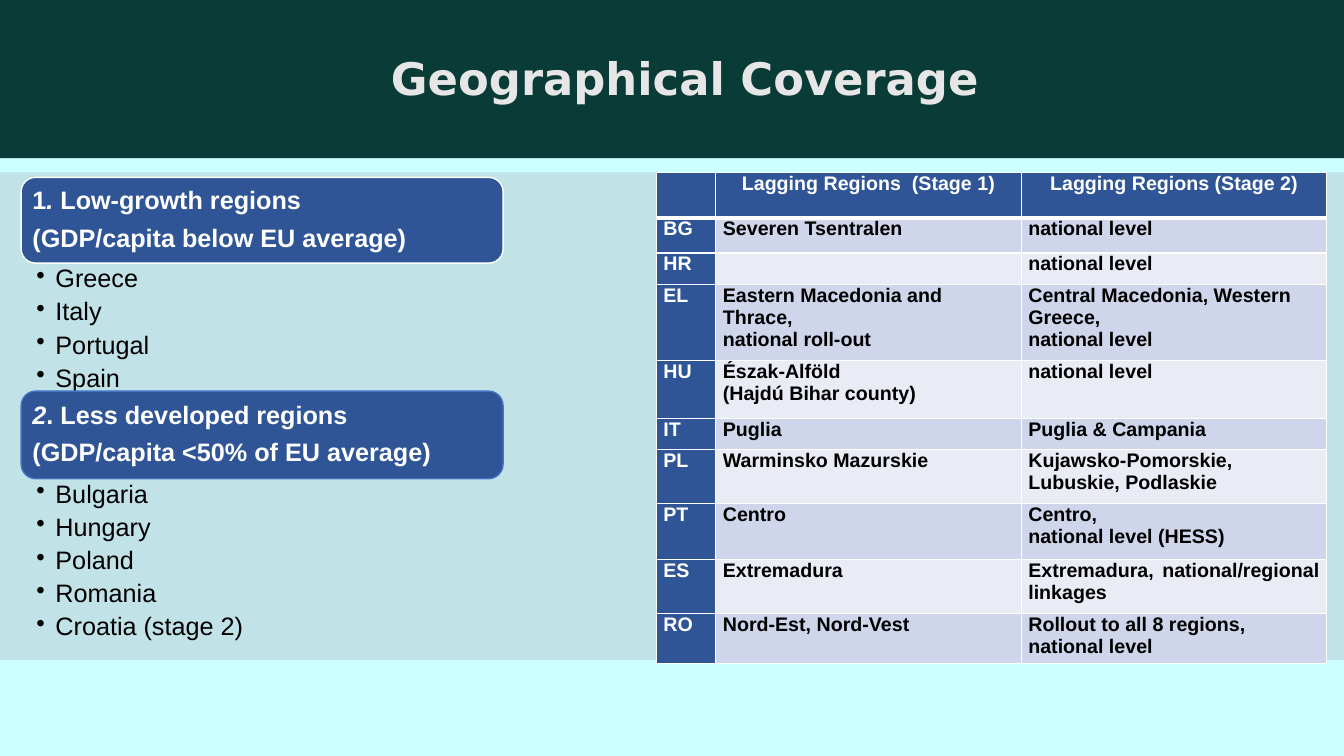
from dataclasses import dataclass

from lxml import etree
from pptx import Presentation
from pptx.dml.color import RGBColor
from pptx.enum.shapes import MSO_SHAPE as Shape
from pptx.enum.text import MSO_ANCHOR as Anchor, PP_ALIGN as Align
from pptx.oxml.ns import qn
from pptx.util import Inches, Pt


@dataclass(frozen=True)
class Theme:
    background: str = "CCFFFF"
    panel: str = "C1E3E8"
    banner: str = "093B37"
    title: str = "E7E6E6"
    accent: str = "2F5597"
    outline: str = "4472C4"
    white: str = "FFFFFF"
    black: str = "000000"
    dark_band: str = "CFD5EA"
    light_band: str = "E9EBF5"
    title_font: str = "DejaVu Sans"
    body_font: str = "Arial"
    title_size: int = 32
    body_size: int = 18
    table_size: int = 14


theme = Theme()


def set_font(paragraph, size, color, bold=True, name=theme.body_font):
    font = paragraph.font
    font.name, font.size, font.bold = name, Pt(size), bold
    font.color.rgb = RGBColor.from_string(color)


def add_filled_shape(kind, left, top, width, height, color):
    shape = slide.shapes.add_shape(
        kind, Inches(left), Inches(top), Inches(width), Inches(height))
    shape.shadow.inherit = False
    shape.fill.solid()
    shape.fill.fore_color.rgb = RGBColor.from_string(color)
    shape.line.fill.background()
    return shape


presentation = Presentation()
presentation.slide_width, presentation.slide_height = Inches(13.33), Inches(7.5)
slide = presentation.slides.add_slide(presentation.slide_layouts[6])
slide.background.fill.solid()
slide.background.fill.fore_color.rgb = RGBColor.from_string(theme.background)

# Banner and title
add_filled_shape(Shape.RECTANGLE, 0, 1.71, 13.33, 4.84, theme.panel)
add_filled_shape(Shape.RECTANGLE, 0, 0, 13.33, 1.57, theme.banner)
title = slide.shapes.add_textbox(Inches(0.4), Inches(0.56), Inches(12.79), Inches(0.48))
frame = title.text_frame
frame.word_wrap = True
frame.margin_left = frame.margin_right = frame.margin_top = frame.margin_bottom = 0
paragraph = frame.paragraphs[0]
paragraph.text = "Geographical Coverage"
paragraph.alignment = Align.CENTER
paragraph.line_spacing = 0.9
set_font(paragraph, theme.title_size, theme.title, name=theme.title_font)

# Region groups: top, height, outline, heading runs (text, italic), criterion, countries
groups = [
    (1.76, 0.85, theme.white,
     [("1", False), (". ", True), ("Low-growth regions", False)],
     "(GDP/capita below EU average)",
     ["Greece", "Italy", "Portugal", "Spain"]),
    (3.88, 0.87, theme.outline,
     [("2", True), (". Less developed regions", False)],
     "(GDP/capita <50% of EU average)",
     ["Bulgaria", "Hungary", "Poland", "Romania", "Croatia (stage 2)"]),
]
for top, height, outline, heading, criterion, countries in groups:
    box = add_filled_shape(Shape.ROUNDED_RECTANGLE, 0.21, top, 4.78, height, theme.accent)
    box.line.color.rgb = RGBColor.from_string(outline)
    box.line.width = Pt(1)
    frame = box.text_frame
    frame.word_wrap = True
    frame.vertical_anchor = Anchor.MIDDLE
    frame.margin_left = frame.margin_right = Inches(0.07)
    frame.margin_top = frame.margin_bottom = Inches(0.07)
    for text, italic in heading:
        run = frame.paragraphs[0].add_run()
        run.text = text
        run.font.italic = italic
    frame.add_paragraph().text = criterion
    for paragraph in frame.paragraphs:
        paragraph.alignment = Align.LEFT
        paragraph.line_spacing = 0.9
        paragraph.space_after = Pt(7.2)
        set_font(paragraph, theme.body_size, theme.white)

    country_list = slide.shapes.add_textbox(
        Inches(0.21), Inches(top + height), Inches(4.78), Inches(0.32 * len(countries)))
    frame = country_list.text_frame
    frame.word_wrap = True
    frame.margin_left, frame.margin_right = Inches(0.15), Inches(0.14)
    frame.margin_top = frame.margin_bottom = Inches(0.03)
    frame.text = "\n".join(countries)
    for paragraph in frame.paragraphs:
        paragraph.line_spacing = 0.9
        paragraph.space_after = Pt(4.2)
        properties = paragraph._p.get_or_add_pPr()
        properties.set("marL", str(Inches(0.19)))
        properties.set("indent", str(-Inches(0.19)))
        etree.SubElement(properties, qn("a:buChar")).set("char", "•")
        set_font(paragraph, theme.body_size, theme.black, bold=False)

# Table of regions: row height, country code, stage 1, stage 2
rows = [
    (0.45, "", "Lagging Regions  (Stage 1)", "Lagging Regions (Stage 2)"),
    (0.35, "BG", "Severen Tsentralen", "national level"),
    (0.31, "HR", "", "national level"),
    (0.76, "EL", "Eastern Macedonia and Thrace,\nnational roll-out",
     "Central Macedonia, Western Greece,\nnational level"),
    (0.57, "HU", "Észak-Alföld\n(Hajdú Bihar county)", "national level"),
    (0.31, "IT", "Puglia", "Puglia & Campania"),
    (0.54, "PL", "Warminsko Mazurskie", "Kujawsko-Pomorskie, Lubuskie, Podlaskie"),
    (0.55, "PT", "Centro", "Centro,\nnational level (HESS)"),
    (0.54, "ES", "Extremadura", "Extremadura, national/regional linkages"),
    (0.49, "RO", "Nord-Est, Nord-Vest", "Rollout to all 8 regions,\nnational level"),
]
left_aligned = {"EL", "HU", "PL"}
table = slide.shapes.add_table(
    len(rows), 3, Inches(6.51), Inches(1.71), Inches(6.65), Inches(4.87)).table
for column, width in zip(table.columns, (0.59, 3.03, 3.03)):
    column.width = Inches(width)

for row_index, (height, code, *stages) in enumerate(rows):
    table.rows[row_index].height = Inches(height)
    for column_index, text in enumerate([code, *stages]):
        cell = table.cell(row_index, column_index)
        cell.margin_left = cell.margin_right = Inches(0.07)
        cell.margin_top = cell.margin_bottom = 0
        for side in ("lnL", "lnR", "lnT", "lnB"):
            under_header = (row_index, side) in ((0, "lnB"), (1, "lnT"))
            border = etree.SubElement(cell._tc.get_or_add_tcPr(), qn(f"a:{side}"))
            border.set("w", str(Pt(3 if under_header else 1)))
            border_fill = etree.SubElement(border, qn("a:solidFill"))
            etree.SubElement(border_fill, qn("a:srgbClr")).set("val", theme.white)

        is_header = row_index == 0 or column_index == 0
        band = theme.dark_band if row_index % 2 else theme.light_band
        cell.fill.solid()
        cell.fill.fore_color.rgb = RGBColor.from_string(theme.accent if is_header else band)
        if row_index == 0:
            alignment = Align.CENTER
        elif column_index == 0 or code in left_aligned:
            alignment = Align.LEFT
        else:
            alignment = Align.JUSTIFY
        cell.text = text
        for paragraph in cell.text_frame.paragraphs:
            paragraph.alignment = alignment
            set_font(paragraph, theme.table_size, theme.white if is_header else theme.black)

presentation.save("out.pptx")
